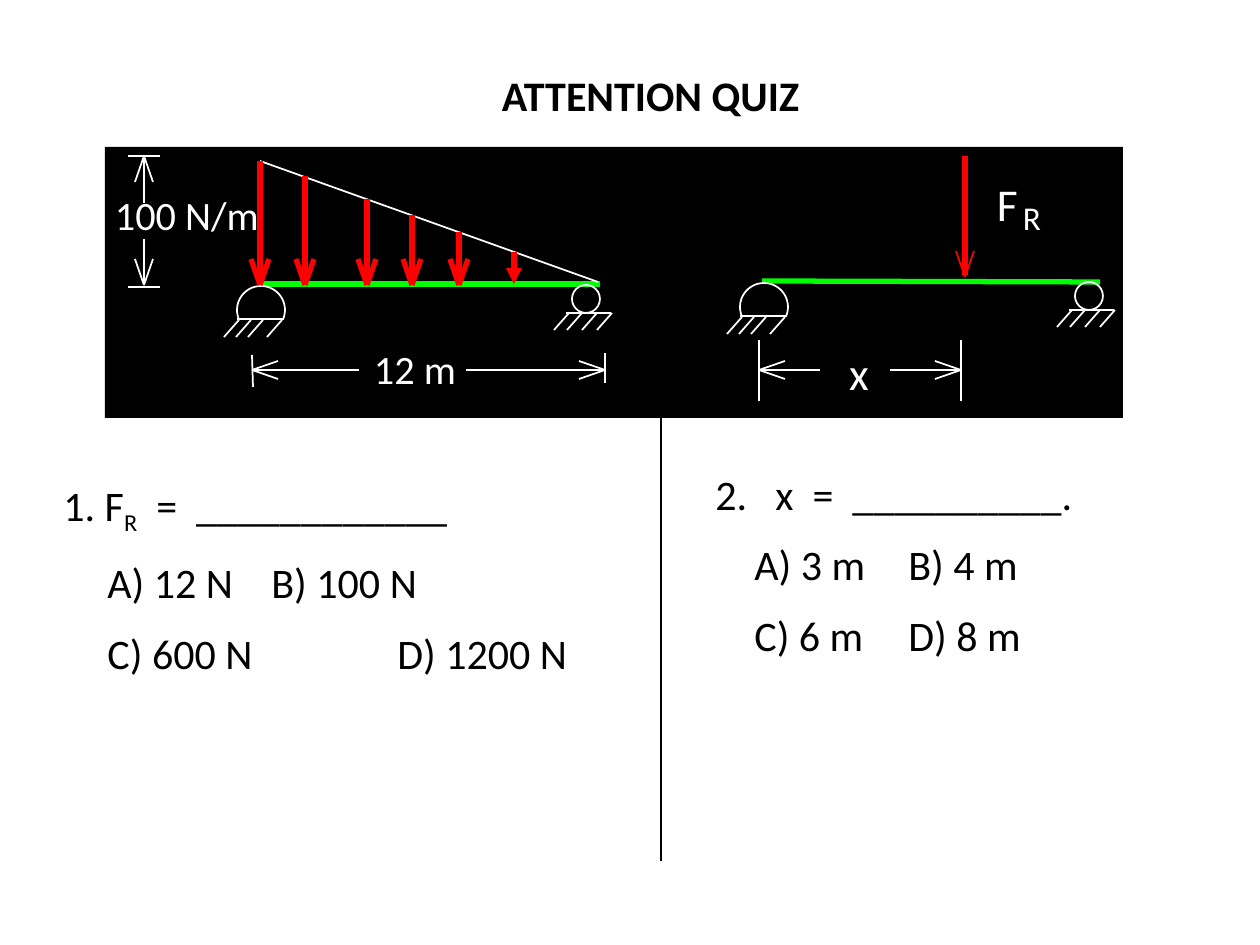
import math
from lxml import etree
from pptx import Presentation
from pptx.dml.color import RGBColor
from pptx.enum.shapes import MSO_CONNECTOR, MSO_SHAPE
from pptx.enum.text import PP_ALIGN
from pptx.oxml.ns import qn
from pptx.util import Pt

STRAIGHT = MSO_CONNECTOR.STRAIGHT
RECTANGLE, OVAL = MSO_SHAPE.RECTANGLE, MSO_SHAPE.OVAL
PX = 914400 / 126
COLORS = {name: RGBColor.from_string(value) for name, value in {
    "black": "000000", "white": "FFFFFF", "red": "FF0000", "green": "00FF00"}.items()}

prs = Presentation()
prs.slide_width, prs.slide_height = int(1260 * PX), int(945 * PX)
slide = prs.slides.add_slide(prs.slide_layouts[6])
shapes = slide.shapes


def add_line(x1, y1, x2, y2, color="white", width=1):
    line = shapes.add_connector(STRAIGHT, *(int(v * PX) for v in (x1, y1, x2, y2)))
    line.line.color.rgb = COLORS[color]
    line.line.width = Pt(width)
    etree.SubElement(line._element.spPr, qn("a:effectLst"))
    return line


def add_text(x, y, w, h, paragraphs, size=24, color="black", inset=True):
    """Each paragraph is a list of (text, is_subscript) runs."""
    frame = shapes.add_textbox(*(int(v * PX) for v in (x, y, w, h))).text_frame
    frame.word_wrap = inset
    if not inset:
        frame.margin_left = frame.margin_right = frame.margin_top = frame.margin_bottom = 0
    for i, runs in enumerate(paragraphs):
        paragraph = frame.add_paragraph() if i else frame.paragraphs[0]
        if i:
            paragraph.space_before = Pt(11.5)
        for text, is_subscript in runs:
            run = paragraph.add_run()
            run.text = text
            run.font.name, run.font.size = "Calibri", Pt(size)
            run.font.color.rgb = COLORS[color]
            if is_subscript:
                run._r.get_or_add_rPr().set("baseline", "-25000")
    return frame


# Title
title = add_text(136, 63, 1029, 63, [[("ATTENTION QUIZ", False)]]).paragraphs[0]
title.alignment = PP_ALIGN.CENTER
title.runs[0].font.bold = True

# Questions, with the tab stops of each paragraph
questions = [
    ((32, 473, 609, 214),
     [[("\t1. F", False), ("R", True), ("  =  ____________", False)],
      [("\tA) 12 N\tB) 100 N", False)],
      [("\tC) 600 N\tD) 1200 N", False)]],
     [[19], [63, 227], [63, 353]]),
    ((703, 462, 504, 214),
     [[("2.\tx  =  __________.", False)],
      [("\tA) 3 m\tB) 4 m", False)],
      [("\tC) 6 m\tD) 8 m", False)]],
     [[60], [39, 193], [39, 193]]),
]
for box, paragraphs, tab_stops in questions:
    frame = add_text(*box, paragraphs)
    for paragraph, stops in zip(frame.paragraphs, tab_stops):
        tab_list = etree.SubElement(paragraph._p.get_or_add_pPr(), qn("a:tabLst"))
        for stop in stops:
            etree.SubElement(tab_list, qn("a:tab"), pos=str(int(stop * PX)), algn="l")

# Diagram background
panel = shapes.add_shape(RECTANGLE, *(int(v * PX) for v in (105, 147, 1018, 271)))
panel.shadow.inherit = False
panel.fill.solid()
panel.fill.fore_color.rgb = COLORS["black"]
panel.line.fill.background()

# Beams and the slope of the load
add_line(262, 284, 600, 284, "green", 3)
add_line(762, 281, 1100, 282, "green", 3)
add_line(260, 161, 598, 282)

# Supports: a pin and a roller under each beam
for dx, dy in [(0, 0), (503, -3)]:
    dome = [(int((261 + dx + 24 * math.cos(math.radians(a))) * PX),
             int((310 + dy + 24 * math.sin(math.radians(a))) * PX))
            for a in range(158, 383, 8)]
    builder = shapes.build_freeform(*dome[0])
    builder.add_line_segments(dome[1:], close=False)
    pin = builder.convert_to_shape()
    roller = shapes.add_shape(OVAL, *(int(v * PX) for v in (572 + dx, 285 + dy, 28, 28)))
    for support in (pin, roller):
        support.shadow.inherit = False
        support.fill.background()
        support.line.color.rgb = COLORS["white"]
        support.line.width = Pt(1)
    add_line(237 + dx, 319 + dy, 284 + dx, 319 + dy)
    add_line(566 + dx, 313 + dy, 611 + dx, 313 + dy)
    for ground, hatches in [(320, (224, 236, 248, 267)), (313, (554, 567, 582, 597))]:
        for x in hatches:
            add_line(x + dx, ground + 17 + dy, x + 15 + dx, ground + dy)

# Open arrows: start, tip, colour, shaft width, barb width
load_tops = [(260, 161), (305, 176), (367, 199), (412, 215), (459, 232)]
arrows = [(x, top, x, 285, "red", 3, 3) for x, top in load_tops]
arrows.append((965, 156, 965, 277, "red", 3, 1))
dimensions = [(144, 203, 144, 156), (144, 239, 144, 285),
              (359, 370, 252, 370), (466, 370, 605, 370),
              (820, 370, 759, 370), (890, 370, 961, 370)]
arrows += [(*ends, "white", 1, 1) for ends in dimensions]
for x1, y1, x2, y2, color, shaft_width, barb_width in arrows:
    length = math.hypot(x2 - x1, y2 - y1)
    ux, uy = (x2 - x1) / length, (y2 - y1) / length
    add_line(x1, y1, x2 - 2 * ux, y2 - 2 * uy, color, shaft_width)
    for side in (-9, 9):
        add_line(x2, y2, x2 - 26 * ux + side * uy, y2 - 26 * uy + side * ux,
                 color, barb_width)

# Shortest load arrow, with a solid head
short_load = add_line(514, 252, 514, 284, "red", 3)
etree.SubElement(short_load.line._get_or_add_ln(), qn("a:tailEnd"), type="triangle")

# Dimension ticks
for tick in [(128, 156, 160, 156), (128, 287, 160, 287),
             (252, 355, 253, 387), (605, 353, 605, 383),
             (759, 340, 759, 401), (961, 340, 961, 401)]:
    add_line(*tick)

# Diagram labels
for text, size, box in [("F", 26, (997, 176, 44, 62)), ("R", 19, (1023, 197, 34, 44)),
                        ("100 N/m", 23, (115, 190, 161, 55)),
                        ("12 m", 23, (374, 344, 100, 55)), ("x", 26, (849, 345, 42, 62))]:
    add_text(*box, [[(text, False)]], size, "white", inset=False)

# Divider between the questions
add_line(661, 158, 661, 861, "black", 0.75)

prs.save("out.pptx")
